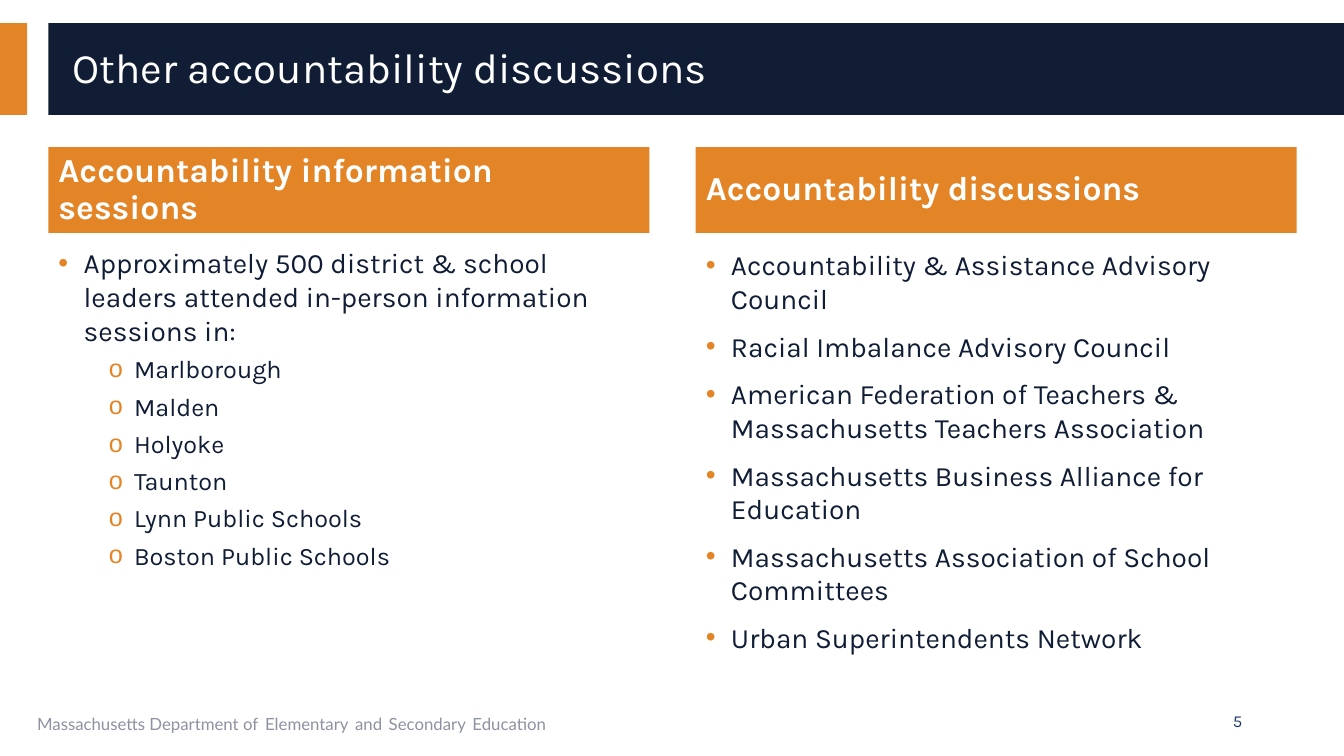
from lxml import etree
from pptx import Presentation
from pptx.dml.color import RGBColor
from pptx.enum.shapes import MSO_SHAPE as Preset
from pptx.enum.text import MSO_ANCHOR as Anchor, MSO_AUTO_SIZE as AutoSize, PP_ALIGN as Align
from pptx.oxml.ns import qn
from pptx.util import Inches, Pt

COLORS = {"orange": "E38526", "navy": "101D35", "blue": "203B6A",
          "gray": "8D92A1", "white": "FFFFFF"}
WIDTH, HEIGHT = 13.33, 7.5
LEFT, COLUMN, PITCH = 0.48, 5.96, 6.42  # two columns of equal width
BAND_TOP, BAND_HEIGHT = 0.23, 0.91
HEADING_TOP, HEADING_HEIGHT = 1.46, 0.85
LIST_HEIGHT = 4.15
FOOTER_TOP, FOOTER_HEIGHT = 6.95, 0.4

SESSIONS = [
    (0, "Approximately 500 district & school leaders attended in-person information sessions in:"),
    (1, "Marlborough"), (1, "Malden"), (1, "Holyoke"), (1, "Taunton"),
    (1, "Lynn Public Schools"), (1, "Boston Public Schools"),
]
DISCUSSIONS = [(0, text) for text in (
    "Accountability & Assistance Advisory Council",
    "Racial Imbalance Advisory Council",
    "American Federation of Teachers & Massachusetts Teachers Association",
    "Massachusetts Business Alliance for Education",
    "Massachusetts Association of School Committees",
    "Urban Superintendents Network",
)]


def color(name):
    return RGBColor.from_string(COLORS[name])


def place(shape, left, top, width, height):
    shape.left, shape.top = Inches(left), Inches(top)
    shape.width, shape.height = Inches(width), Inches(height)


def fill(shape, name):
    shape.fill.solid()
    shape.fill.fore_color.rgb = color(name)


def prepare(shape, anchor=Anchor.TOP):
    frame = shape.text_frame
    frame.word_wrap = True
    frame.auto_size = AutoSize.NONE
    frame.vertical_anchor = anchor
    return frame


def write(para, text, size, ink="navy", face="Karla", bold=False, align=Align.LEFT,
          before=0, spacing=1.0):
    para.alignment = align
    para.space_before = Pt(before)
    para.line_spacing = spacing
    span = para.add_run()
    span.text = text
    span.font.size, span.font.name, span.font.bold = Pt(size), face, bold
    span.font.color.rgb = color(ink)


def add_bullet(para, level):
    para.level = level
    props = para._p.get_or_add_pPr()
    props.set("marL", str(Inches(0.25 + 0.5 * level)))
    props.set("indent", str(Inches(-0.25)))
    tint = etree.SubElement(props, qn("a:buClr"))
    etree.SubElement(tint, qn("a:srgbClr"), val=COLORS["orange"])
    etree.SubElement(props, qn("a:buChar"), char="•o"[level])


def add_band(page, left, width, name):
    box = page.shapes.add_shape(Preset.RECTANGLE, Inches(left), Inches(BAND_TOP),
                                Inches(width), Inches(BAND_HEIGHT))
    box.shadow.inherit = False
    fill(box, name)
    box.line.fill.background()


def add_title(page, text):
    title = page.shapes.title
    place(title, 0.62, 0.32, 12.5, 0.74)
    write(prepare(title, Anchor.MIDDLE).paragraphs[0], text, 30, "white", spacing=0.9)


def add_column(heading, body, left, list_top, list_width, text, items):
    # Heading bar
    place(heading, left, HEADING_TOP, COLUMN, HEADING_HEIGHT)
    fill(heading, "orange")
    write(prepare(heading, Anchor.MIDDLE).paragraphs[0], text, 24, "white",
          bold=True, spacing=0.9)
    # Bulleted list
    place(body, left, list_top, list_width, LIST_HEIGHT)
    frame = prepare(body)
    for index, (level, item) in enumerate(items):
        para = frame.add_paragraph() if index else frame.paragraphs[0]
        add_bullet(para, level)
        write(para, item, 20 - 2 * level, before=(10 - 5 * level) if index else 0)


def add_footer(page):
    def footer_box(left, width, anchor):
        box = page.shapes.add_textbox(Inches(left), Inches(FOOTER_TOP),
                                      Inches(width), Inches(FOOTER_HEIGHT))
        return prepare(box, anchor).paragraphs[0]

    # Department name, with larger spaces between its last words
    para = footer_box(0.27, 8.44, Anchor.TOP)
    words = ("Massachusetts Department of", "Elementary", "and", "Secondary", "Education")
    for index, word in enumerate(words):
        if index:
            write(para, " ", 18, "blue", "Lato")
        write(para, word, 12, "gray", "Lato")
    # Page number
    write(footer_box(9.42, 3, Anchor.MIDDLE), "5", 12, "blue", align=Align.RIGHT)


def main():
    deck = Presentation()
    deck.slide_width, deck.slide_height = Inches(WIDTH), Inches(HEIGHT)
    page = deck.slides.add_slide(deck.slide_layouts.get_by_name("Comparison"))
    title, left_heading, left_list, right_heading, right_list = page.placeholders

    # Title bands, kept behind the title
    add_band(page, 0, 0.27, "orange")
    add_band(page, LEFT, WIDTH - LEFT, "navy")
    page.shapes._spTree.append(title._element)
    add_title(page, "Other accountability discussions")

    add_column(left_heading, left_list, LEFT, 2.39, COLUMN,
               "Accountability information sessions", SESSIONS)
    add_column(right_heading, right_list, LEFT + PITCH, 2.41, 6.22,
               "Accountability discussions", DISCUSSIONS)
    add_footer(page)
    deck.save("out.pptx")


if __name__ == "__main__":
    main()
